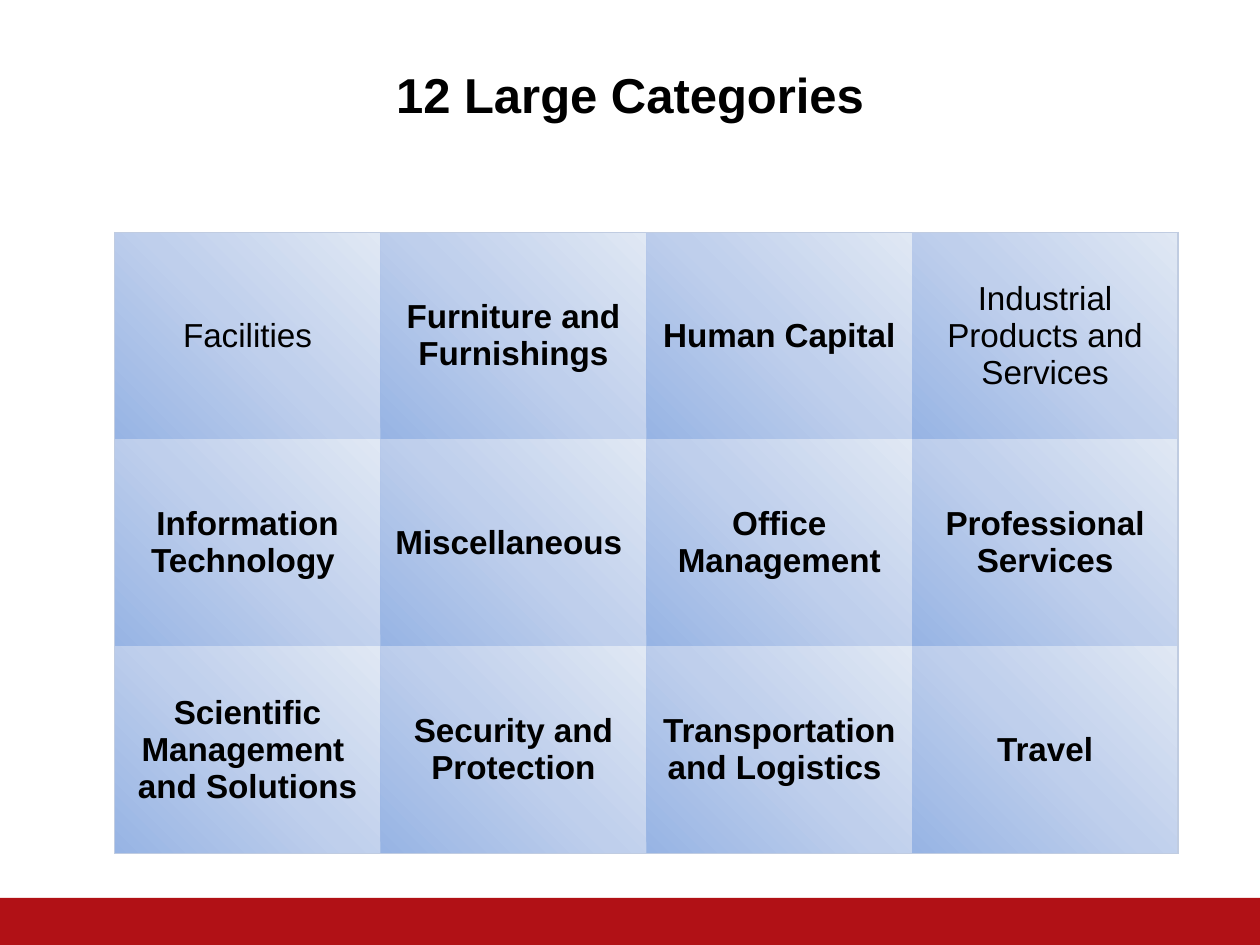
import pptx
import pptx.dml.color
import pptx.enum.shapes
import pptx.enum.text
import pptx.oxml
import pptx.oxml.ns
import pptx.util
from lxml import etree

RGB = pptx.dml.color.RGBColor
BLACK = RGB(0x00, 0x00, 0x00)
WHITE = RGB(0xFF, 0xFF, 0xFF)
RED = RGB(0xB1, 0x11, 0x16)
EDGE = RGB(0xC0, 0xCC, 0xE1)
GRADIENT = [(0, RGB(0x97, 0xB4, 0xE4)), (50, RGB(0xBF, 0xCF, 0xEC)),
            (100, RGB(0xE0, 0xE8, 0xF4))]
NO_STYLE = "{2D5ABB26-0587-4C30-8999-92F81FD0307C}"
ANCHOR = pptx.enum.text.MSO_ANCHOR

CATEGORIES = [
    ["Facilities", "Furniture and Furnishings", "Human Capital",
     "Industrial Products and Services"],
    ["Information Technology ", "Miscellaneous ", "Office Management",
     "Professional Services"],
    ["Scientific Management  and Solutions", "Security and Protection",
     "Transportation and Logistics ", "Travel"],
]
REGULAR = {"Facilities", "Industrial Products and Services"}


def add(parent, tag, **attrs):
    return etree.SubElement(parent, pptx.oxml.ns.qn(tag), **attrs)


class Deck:
    font = "Arial"

    def __init__(self, width, height):
        self.prs = pptx.Presentation()
        self.prs.slide_width = pptx.util.Inches(width)
        self.prs.slide_height = pptx.util.Inches(height)
        self.s = self.prs.slides.add_slide(self.prs.slide_layouts[5])

    def box(self, x, y, w, h):
        """Turn shares of the slide into lengths."""
        pw, ph = self.prs.slide_width, self.prs.slide_height
        return [round(v) for v in (x * pw, y * ph, w * pw, h * ph)]

    def set_text(self, tf, text, size, bold=True):
        tf.text = text
        tf.word_wrap = True
        p = tf.paragraphs[0]
        p.alignment = pptx.enum.text.PP_ALIGN.CENTER
        font = p.runs[0].font
        font.name, font.size, font.bold = self.font, pptx.util.Pt(size), bold
        font.color.rgb = BLACK

    def title(self, text, *share):
        sp = self.s.shapes.title
        sp.left, sp.top, sp.width, sp.height = self.box(*share)
        tf = sp.text_frame
        self.set_text(tf, text, 28)
        tf.auto_size = pptx.enum.text.MSO_AUTO_SIZE.NONE
        tf.vertical_anchor = ANCHOR.TOP
        tf.margin_left = tf.margin_right = tf.margin_bottom = pptx.util.Inches(0.1)
        tf.margin_top = pptx.util.Inches(0.14)

    def band(self, color, *share):
        sp = self.s.shapes.add_shape(
            pptx.enum.shapes.MSO_SHAPE.RECTANGLE, *self.box(*share))
        sp.shadow.inherit = False
        sp.fill.solid()
        sp.fill.fore_color.rgb = color
        sp.line.fill.background()

    def style_cell(self, cell, edges):
        """Draw the given edges, hide the others, and shade the cell."""
        tcPr = cell._tc.get_or_add_tcPr()
        for side in "LRTB":
            ln = add(tcPr, f"a:ln{side}", w=str(pptx.util.Pt(0.75)))
            if side in edges:
                add(add(ln, "a:solidFill"), "a:srgbClr", val=str(edges[side]))
            else:
                add(ln, "a:noFill")
        grad = add(tcPr, "a:gradFill", rotWithShape="1")
        stops = add(grad, "a:gsLst")
        for pos, color in GRADIENT:
            add(add(stops, "a:gs", pos=str(pos * 1000)), "a:srgbClr", val=str(color))
        add(grad, "a:lin", ang=str(315 * 60000), scaled="0")

    def table(self, rows, *share):
        n, m = len(rows), len(rows[0])
        frame = self.s.shapes.add_table(n, m, *self.box(*share))
        table = frame.table
        table.first_row = table.horz_banding = False
        table._tbl.tblPr.find(pptx.oxml.ns.qn("a:tableStyleId")).text = NO_STYLE
        for i, row in enumerate(rows):
            for j, text in enumerate(row):
                cell = table.cell(i, j)
                self.set_text(cell.text_frame, text, 19, text not in REGULAR)
                cell.vertical_anchor = ANCHOR.MIDDLE
                edges = {}
                if i == 0:
                    edges.update(T=EDGE, B=WHITE)
                if i == n - 1:
                    edges["B"] = EDGE
                if j == 0:
                    edges["L"] = EDGE
                if j == m - 1:
                    edges["R"] = EDGE
                self.style_cell(cell, edges)


def main():
    deck = Deck(10, 7.5)
    # Footer band
    deck.band(RED, 0, 0.95, 1, 0.05)
    # Category grid
    deck.table(CATEGORIES, 0.091, 0.246, 0.844, 0.657)
    # Heading
    deck.title("12 Large Categories", 0.05, 0.05, 0.9, 0.123)
    deck.prs.save("out.pptx")


if __name__ == "__main__":
    main()
